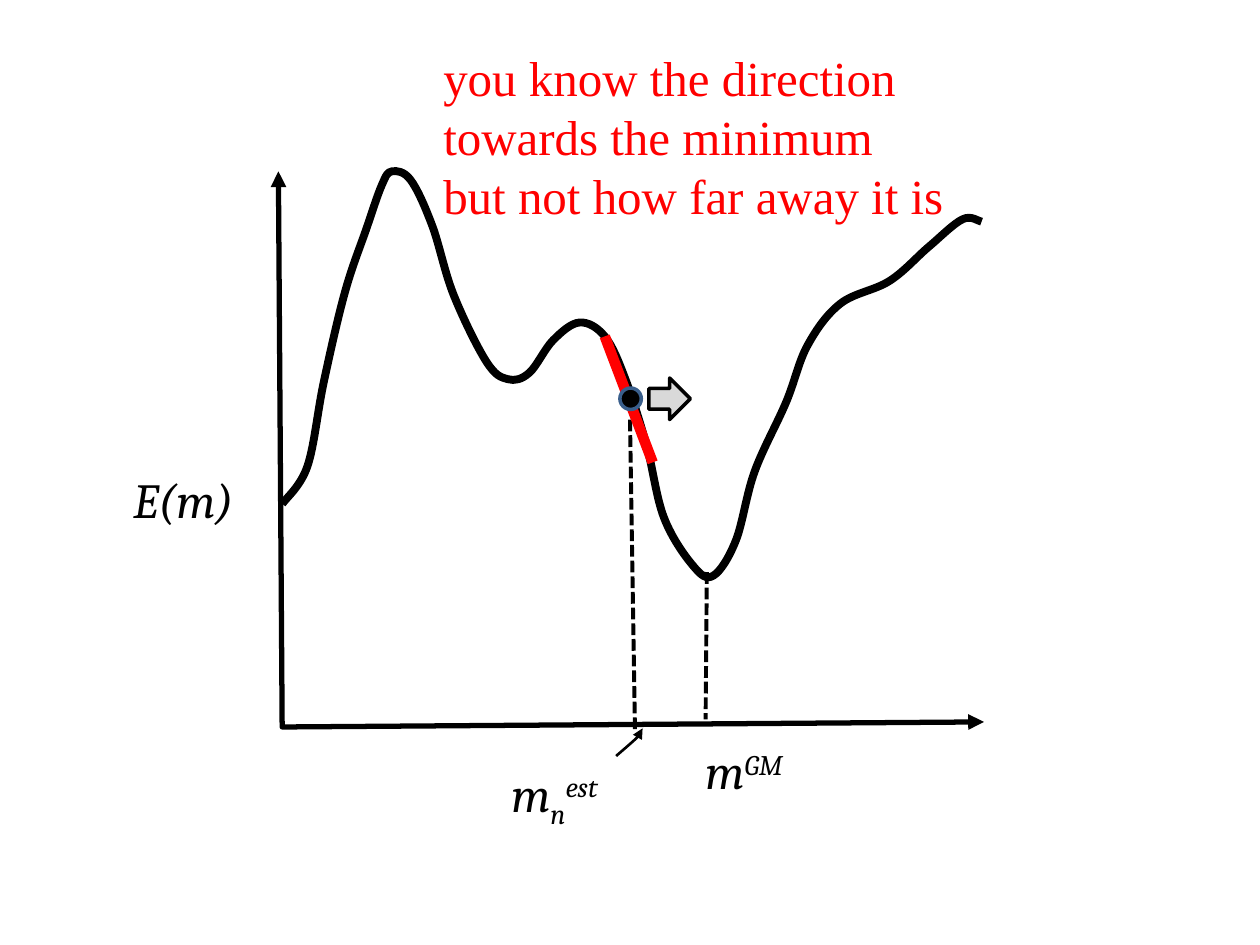
from lxml.etree import SubElement
from pptx import Presentation
from pptx.dml.color import RGBColor
from pptx.enum.dml import MSO_LINE
from pptx.enum.shapes import MSO_CONNECTOR, MSO_SHAPE
from pptx.enum.text import MSO_AUTO_SIZE
from pptx.oxml.ns import qn
from pptx.util import Inches, Pt

BLACK = RGBColor(0x00, 0x00, 0x00)
RED = RGBColor(0xFF, 0x00, 0x00)
GREY = RGBColor(0xD9, 0xD9, 0xD9)
BLUE = RGBColor(0x3A, 0x5F, 0x8C)

# The page is a grid of square cells.
COLUMNS, ROWS = 1000, 750
CELL = Inches(0.01)

AXES = [(221, 136), (224, 577), (781, 573)]
ERROR_CURVE = [
    (224, 400), (244, 370), (257, 303), (274, 231), (291, 181), (303, 147),
    (311, 136), (326, 143), (343, 179), (360, 234), (386, 287), (403, 301),
    (420, 296), (439, 270), (460, 256), (480, 267), (496, 300), (513, 353),
    (527, 411), (550, 449), (566, 457), (584, 429), (599, 374), (624, 319),
    (641, 274), (667, 241), (706, 223), (737, 196), (764, 174), (779, 176),
]
ESTIMATE_POINTER = [(489, 600), (507, 584), (510, 578)]
SUBSCRIPT, SUPERSCRIPT = -25, 30


def cells(*counts):
    return [count * CELL for count in counts]


def style_line(line, color, width, dash=None, head=False, tail=False):
    line.color.rgb = color
    line.width = Pt(width)
    if dash:
        line.dash_style = dash
    properties = line._get_or_add_ln()
    for wanted, tag in ((head, "a:headEnd"), (tail, "a:tailEnd")):
        if wanted:
            SubElement(properties, qn(tag)).set("type", "triangle")


def add_text(page, place, *lines, font, color=BLACK, italic=False):
    """Each line is a list of (text, baseline shift in percent) pairs."""
    box = page.shapes.add_textbox(*cells(*place))
    frame = box.text_frame
    frame.word_wrap = True
    frame.auto_size = MSO_AUTO_SIZE.SHAPE_TO_FIT_TEXT
    for index, line in enumerate(lines):
        para = frame.paragraphs[0] if index == 0 else frame.add_paragraph()
        for text, shift in line:
            span = para.add_run()
            span.text = text
            span.font.name = font
            span.font.size = Pt(28)
            span.font.italic = italic
            span.font.color.rgb = color
            if shift:
                span._r.get_or_add_rPr().set("baseline", str(shift * 1000))


def add_path(page, points, width, **ends):
    builder = page.shapes.build_freeform(*points[0], scale=CELL)
    builder.add_line_segments(points[1:], close=False)
    path = builder.convert_to_shape()
    path.shadow.inherit = False
    path.fill.background()
    style_line(path.line, BLACK, width, **ends)
    return path


def smooth_path(path):
    """Turn the straight segments into a Catmull-Rom spline through the same points."""
    nodes = list(path._element.iter(qn("a:pt")))
    # Ten units to a cell keep the control points precise.
    outline = next(path._element.iter(qn("a:path")))
    for side in ("w", "h"):
        outline.set(side, str(int(outline.get(side)) * 10))
    points = [(int(node.get("x")) * 10, int(node.get("y")) * 10) for node in nodes]
    for node, (x, y) in zip(nodes, points):
        node.set("x", str(x))
        node.set("y", str(y))
    padded = [points[0], *points, points[-1]]
    for index, segment in enumerate(outline.findall(qn("a:lnTo"))):
        before, start, end, after = padded[index:index + 4]
        leave = [s + (e - b) / 6 for b, s, e in zip(before, start, end)]
        arrive = [e - (a - s) / 6 for s, e, a in zip(start, end, after)]
        segment.tag = qn("a:cubicBezTo")
        for position, (x, y) in enumerate((leave, arrive)):
            control = SubElement(segment, qn("a:pt"), x=str(round(x)), y=str(round(y)))
            segment.insert(position, control)


def add_straight(page, start, end, color, width, dash=None):
    straight = page.shapes.add_connector(MSO_CONNECTOR.STRAIGHT, *cells(*start, *end))
    style_line(straight.line, color, width, dash)
    SubElement(straight._element.spPr, qn("a:effectLst"))


def add_marker(page, kind, place, fill, outline, rotation=0):
    marker = page.shapes.add_shape(kind, *cells(*place))
    marker.shadow.inherit = False
    marker.rotation = rotation
    marker.fill.solid()
    marker.fill.fore_color.rgb = fill
    style_line(marker.line, outline, 2)


def main():
    deck = Presentation()
    deck.slide_width, deck.slide_height = cells(COLUMNS, ROWS)
    page = deck.slides.add_slide(deck.slide_layouts[6])

    symbol = {"font": "Cambria", "italic": True}
    add_text(page, (396, 601, 115, 57),
             [("m", 0), ("n", SUBSCRIPT), ("est", SUPERSCRIPT)], **symbol)
    add_text(page, (550, 583, 119, 57), [("m", 0), ("GM", SUPERSCRIPT)], **symbol)
    smooth_path(add_path(page, ESTIMATE_POINTER, 1.5, tail=True))
    add_text(page, (96, 368, 119, 57), [("E(m)", 0)], **symbol)

    add_path(page, AXES, 3, head=True, tail=True)
    smooth_path(add_path(page, ERROR_CURVE, 4.5))
    for start, end in (((500, 333), (504, 581)), ((561, 454), (560, 571))):
        add_straight(page, start, end, BLACK, 2.25, MSO_LINE.SQUARE_DOT)

    add_marker(page, MSO_SHAPE.DOWN_ARROW, (515, 300, 33, 33), GREY, BLACK, rotation=270)
    add_text(page, (342, 33, 467, 151),
             [("you know the direction", 0)],
             [("towards the minimum", 0)],
             [("but not how far away it is", 0)],
             font="Times New Roman", color=RED)
    add_straight(page, (480, 267), (518, 367), RED, 6)
    add_marker(page, MSO_SHAPE.OVAL, (492, 308, 17, 17), BLACK, BLUE)

    deck.save("out.pptx")


if __name__ == "__main__":
    main()
